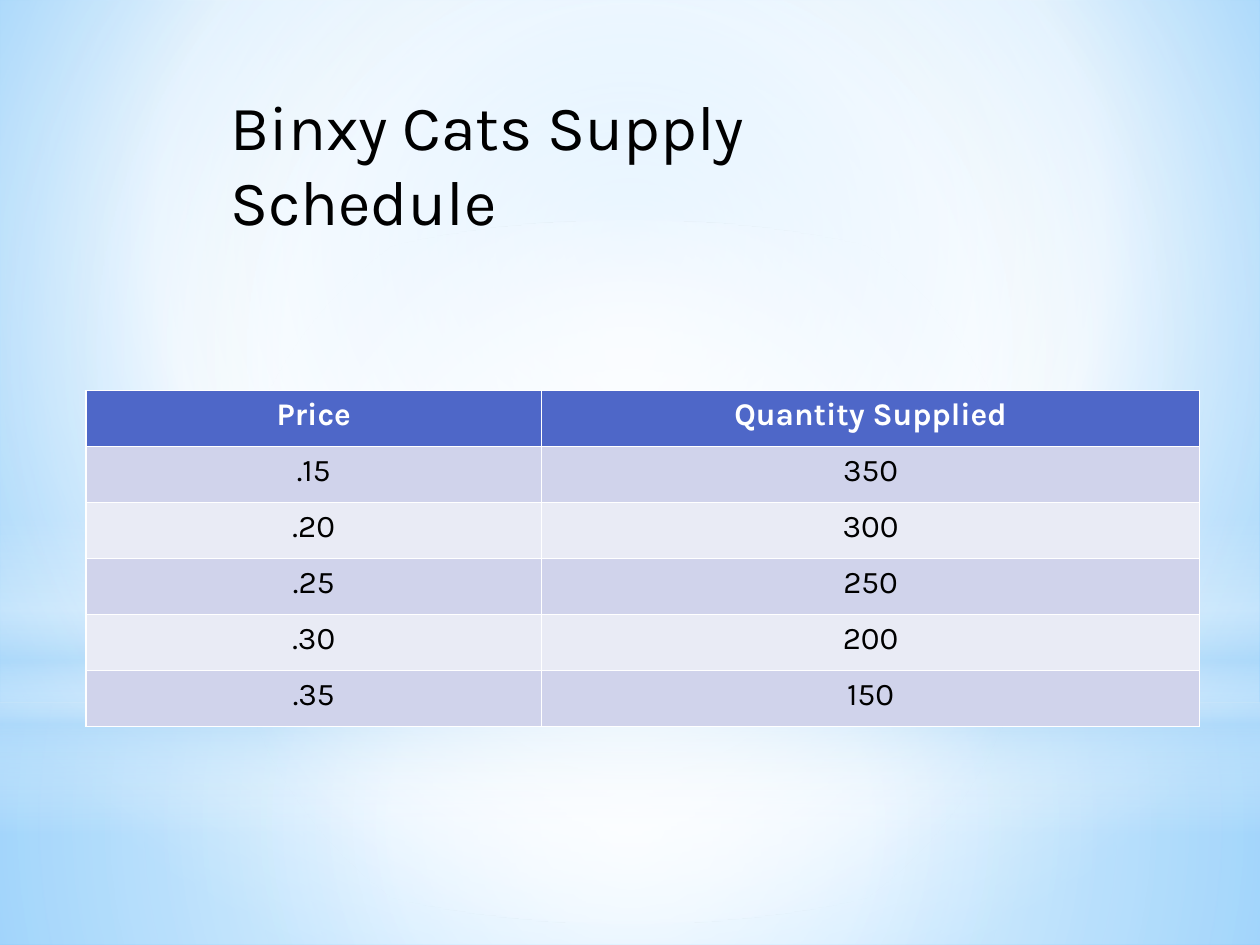
from lxml.etree import SubElement
from pptx import Presentation
from pptx.dml.color import RGBColor
from pptx.enum.shapes import MSO_SHAPE
from pptx.enum.text import MSO_ANCHOR, PP_ALIGN
from pptx.oxml.ns import qn
from pptx.util import Cm, Pt

WHITE = RGBColor(0xFF, 0xFF, 0xFF)
BLACK = RGBColor(0, 0, 0)
PALE = RGBColor(0xB4, 0xDC, 0xFA)
SKY = RGBColor(0x9E, 0xD5, 0xFF)
DEEP = RGBColor(0x5B, 0xB9, 0xFF)
HEAD = RGBColor(0x4E, 0x67, 0xC8)
BANDS = RGBColor(0xD0, 0xD3, 0xEB), RGBColor(0xE9, 0xEB, 0xF5)

TITLE = "Binxy Cats Supply Schedule"
ROWS = [
    ("Price", "Quantity Supplied"),
    (".15", "350"),
    (".20", "300"),
    (".25", "250"),
    (".30", "200"),
    (".35", "150"),
]
WIDTHS = 9.19, 13.26
TALL = 1.13

WIDE, HIGH = 25.4, 19.05
MID = 50, 50, 50, 50
BACK = [(0, SKY, 100), (60, WHITE, 100), (100, DEEP, 100)]
GLOWS = [
    (MSO_SHAPE.RECTANGLE, 14.17, 4.88, MID,
     [(0, WHITE, 91), (37, WHITE, 76), (100, PALE, 79)]),
    (MSO_SHAPE.RECTANGLE, 0, 14.17, MID,
     [(0, WHITE, 89), (48, WHITE, 62), (100, PALE, 79)]),
    (MSO_SHAPE.RECTANGLE, 10.46, 6.35, None,
     [(0, WHITE, 0), (29, WHITE, 30), (45, PALE, 40),
      (55, WHITE, 26), (65, PALE, 60), (100, WHITE, 0)]),
    (MSO_SHAPE.OVAL, 4.45, 14.17, MID,
     [(0, WHITE, 100), (56, WHITE, 0)]),
]
TEXT = {"name": "Karla", "size": Pt(18), "bold": False}


def style(font, color, **extra):
    for key, value in {**TEXT, **extra}.items():
        setattr(font, key, value)
    font.color.rgb = color


def shade(owner, fill, stops, focus):
    fill.solid()
    old = next(owner.iter(qn("a:solidFill")))
    grad = old.makeelement(qn("a:gradFill"), {"rotWithShape": "1"})
    old.getparent().replace(old, grad)
    group = SubElement(grad, qn("a:gsLst"))
    for place, color, alpha in stops:
        stop = SubElement(group, qn("a:gs"), pos=str(place * 1000))
        tint = SubElement(stop, qn("a:srgbClr"), val=str(color))
        if alpha < 100:
            SubElement(tint, qn("a:alpha"), val=str(alpha * 1000))
    if focus:
        round_ = SubElement(grad, qn("a:path"), path="circle")
        sides = {side: str(part * 1000) for side, part in zip("ltrb", focus)}
        SubElement(round_, qn("a:fillToRect"), sides)
    else:
        SubElement(grad, qn("a:lin"), ang="5400000", scaled="0")


def add_glows(slide):
    for kind, top, high, focus, stops in GLOWS:
        glow = slide.shapes.add_shape(kind, 0, Cm(top), Cm(WIDE), Cm(high))
        glow.shadow.inherit = False
        glow.line.fill.background()
        shade(glow.element.spPr, glow.fill, stops, focus)


def add_grid(slide):
    grid = slide.shapes.add_table(
        len(ROWS), len(WIDTHS), Cm(1.73), Cm(7.87),
        Cm(sum(WIDTHS)), Cm(TALL * len(ROWS))).table
    for column, width in zip(grid.columns, WIDTHS):
        column.width = Cm(width)
    for i, row in enumerate(ROWS):
        grid.rows[i].height = Cm(TALL)
        for j, word in enumerate(row):
            cell = grid.cell(i, j)
            cell.fill.solid()
            cell.fill.fore_color.rgb = BANDS[(i - 1) % 2] if i else HEAD
            line = cell.text_frame.paragraphs[0]
            line.alignment = PP_ALIGN.CENTER
            run = line.add_run()
            run.text = word
            style(run.font, BLACK if i else WHITE, bold=not i)


def add_title(slide):
    box = slide.shapes.add_textbox(Cm(4.39), Cm(1.63), Cm(16.1), Cm(1.8))
    frame = box.text_frame
    for key, value in {"word_wrap": True, "vertical_anchor": MSO_ANCHOR.TOP}.items():
        setattr(frame, key, value)
    run = frame.paragraphs[0].add_run()
    run.text = TITLE
    style(run.font, BLACK, size=Pt(36))


def main():
    deck = Presentation()
    deck.slide_width, deck.slide_height = Cm(WIDE), Cm(HIGH)
    slide = deck.slides.add_slide(deck.slide_layouts[6])
    shade(slide.element, slide.background.fill, BACK, (20, 10, 20, 60))
    add_glows(slide)
    add_grid(slide)
    add_title(slide)
    deck.save("out.pptx")


if __name__ == "__main__":
    main()
